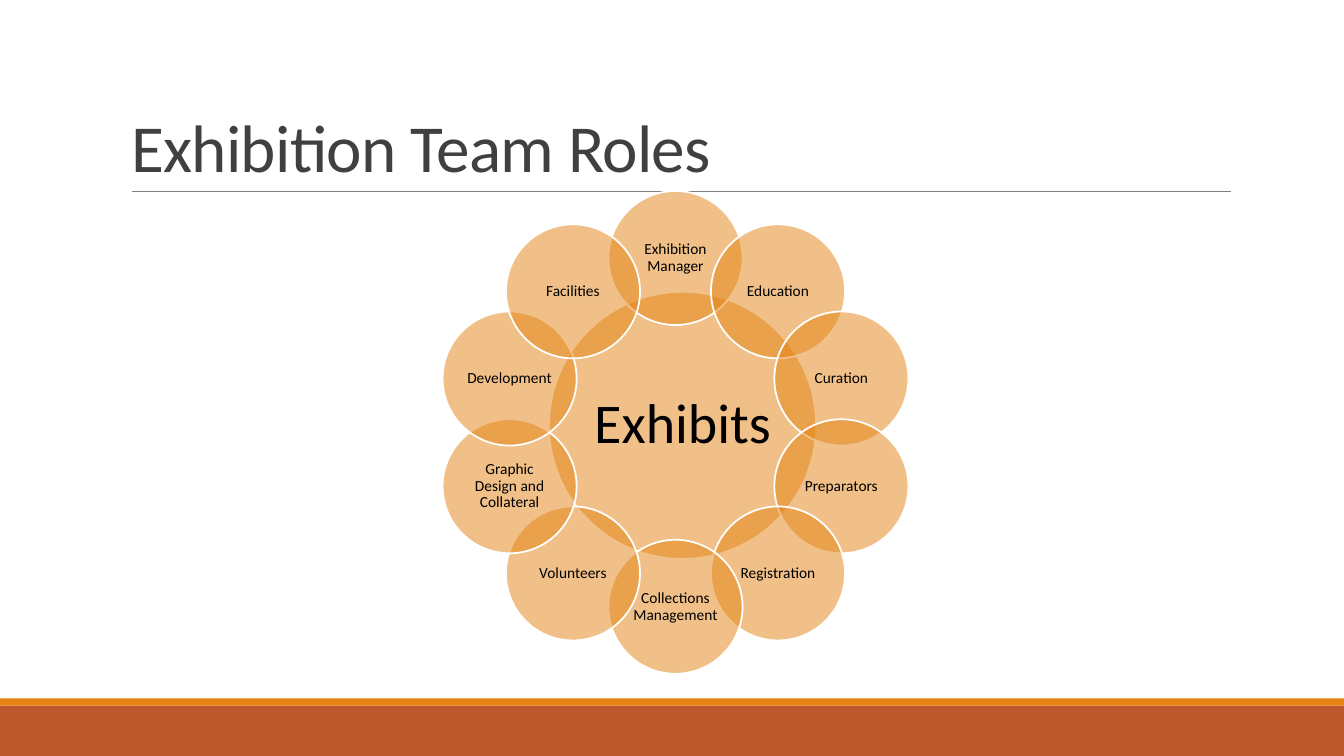
from math import cos, radians, sin

from lxml.etree import SubElement
from pptx import Presentation
from pptx.dml.color import RGBColor
from pptx.enum.shapes import MSO_CONNECTOR, MSO_SHAPE
from pptx.enum.text import MSO_ANCHOR, MSO_AUTO_SIZE, PP_ALIGN
from pptx.oxml.ns import qn
from pptx.util import Inches, Pt

COLORS = {
    "orange": "E48312",
    "rust": "BD582C",
    "rule": "808080",
    "title": "404040",
    "text": "000000",
    "outline": "FFFFFF",
}
ROLES = [
    "Exhibition Manager",
    "Education",
    "Curation",
    "Preparators",
    "Registration",
    "Collections Management",
    "Volunteers",
    "Graphic Design and Collateral",
    "Development",
    "Facilities",
]
RING_X, RING_Y, RING_RADIUS = 6.7, 4.29, 1.73


class SlideBuilder:
    font_name = "Calibri"

    def __init__(self, page):
        self.page = page

    def color(self, name):
        return RGBColor.from_string(COLORS[name])

    def format_text(self, frame, text, size, color, spacing):
        frame.text = text
        frame.word_wrap = True
        paragraph = frame.paragraphs[0]
        paragraph.line_spacing = spacing
        paragraph.font.name = self.font_name
        paragraph.font.size = Pt(size)
        paragraph.font.color.rgb = self.color(color)
        return paragraph

    def title(self, text, left, top, width, height):
        box = self.page.shapes.title
        box.left, box.top = Inches(left), Inches(top)
        box.width, box.height = Inches(width), Inches(height)
        frame = box.text_frame
        paragraph = self.format_text(frame, text, 48, "title", 0.85)
        paragraph.alignment = PP_ALIGN.LEFT
        paragraph.runs[0].font._element.set("spc", "-50")
        frame.auto_size = MSO_AUTO_SIZE.NONE
        frame.vertical_anchor = MSO_ANCHOR.BOTTOM

    def shape(self, kind, left, top, width, height, color):
        shape = self.page.shapes.add_shape(
            kind, Inches(left), Inches(top), Inches(width), Inches(height)
        )
        shape.shadow.inherit = False
        shape.fill.solid()
        shape.fill.fore_color.rgb = self.color(color)
        return shape

    def band(self, top, height, color):
        band = self.shape(MSO_SHAPE.RECTANGLE, 0, top, 13.33, height, color)
        band.line.fill.background()

    def rule(self, left, right, top):
        line = self.page.shapes.add_connector(
            MSO_CONNECTOR.STRAIGHT, Inches(left), Inches(top), Inches(right), Inches(top)
        )
        line.line.color.rgb = self.color("rule")
        line.line.width = Pt(0.5)
        SubElement(line._element.spPr, qn("a:effectLst"))

    def circle(self, text, center_x, center_y, diameter, size, inset):
        circle = self.shape(
            MSO_SHAPE.OVAL,
            center_x - diameter / 2,
            center_y - diameter / 2,
            diameter,
            diameter,
            "orange",
        )
        fill_color = circle._element.spPr.find(qn("a:solidFill"))[0]
        SubElement(fill_color, qn("a:alpha"), val="50000")
        circle.line.color.rgb = self.color("outline")
        circle.line.width = Pt(1.25)
        frame = circle.text_frame
        frame.margin_left = frame.margin_right = Inches(inset)
        frame.margin_top = frame.margin_bottom = Inches(inset)
        frame.vertical_anchor = MSO_ANCHOR.MIDDLE
        paragraph = self.format_text(frame, text, size, "text", 0.9)
        paragraph.alignment = PP_ALIGN.CENTER


def main():
    deck = Presentation()
    deck.slide_width, deck.slide_height = Inches(13.33), Inches(7.5)
    builder = SlideBuilder(deck.slides.add_slide(deck.slide_layouts[5]))

    builder.band(7, 0.5, "rust")
    builder.band(6.93, 0.07, "orange")
    builder.rule(1.31, 12.21, 1.9)
    builder.title("Exhibition Team Roles", 1.2, 0.31, 11, 1.59)

    builder.circle("Exhibits", 6.77, 4.22, 2.65, 40, 0.06)
    for index, role in enumerate(ROLES):
        angle = radians(index * 360 / len(ROLES))
        center_x = RING_X + RING_RADIUS * sin(angle)
        center_y = RING_Y - RING_RADIUS * cos(angle)
        builder.circle(role, center_x, center_y, 1.33, 11, 0.02)

    deck.save("out.pptx")


if __name__ == "__main__":
    main()
